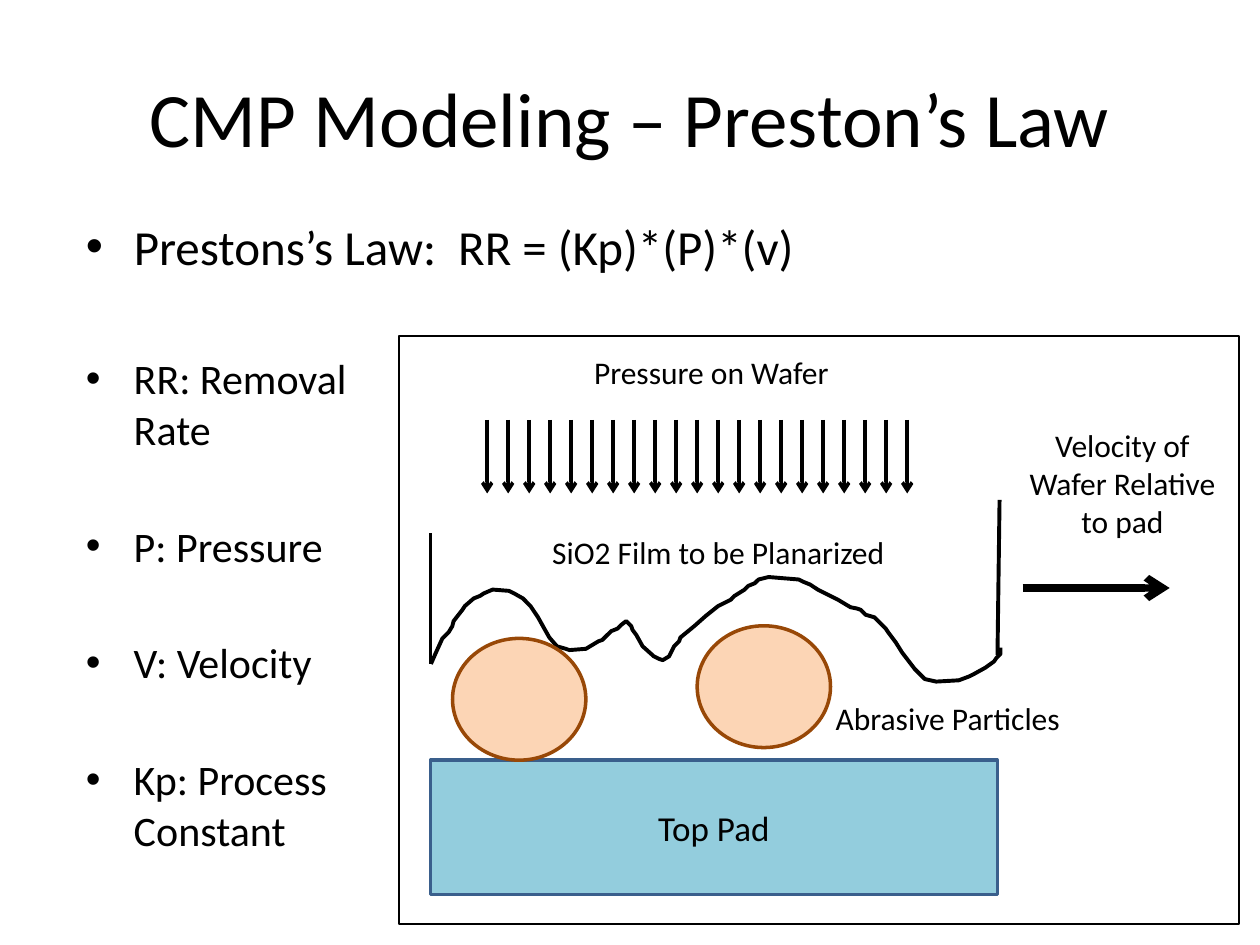
from lxml import etree
from pptx import Presentation
from pptx import util as u
from pptx.dml.color import RGBColor
from pptx.enum import shapes, text
from pptx.oxml.ns import qn

THEME = {
    "font": "Calibri",
    "ink": "000000", "pad": "93CDDD", "pad_line": "3A5F8C",
    "particle": "FCD5B5", "particle_line": "984807",
    "title": 44, "law": 28, "term": 24, "pad_text": 20, "label": 18,
}

presentation = Presentation()
presentation.slide_width, presentation.slide_height = u.Inches(10), u.Inches(7.5)
CELL = presentation.slide_width / 60  # 60 columns by 45 rows of square cells
slide = presentation.slides.add_slide(presentation.slide_layouts[5])


def grid(*cells):
    return [u.Emu(round(cell * CELL)) for cell in cells]


def style(item, line=None, width=1, fill=None, arrow=False):
    """Set outline and fill, drop the shadow, and add an arrowhead if asked."""
    properties = item._element.spPr
    item.line.color.rgb = RGBColor.from_string(THEME[line])
    item.line.width = u.Pt(width)
    if arrow:
        etree.SubElement(item.line._get_or_add_ln(), qn("a:tailEnd"), type="arrow")
    if hasattr(item, "fill"):
        if fill:
            item.fill.solid()
            item.fill.fore_color.rgb = RGBColor.from_string(THEME[fill])
        else:
            item.fill.background()
    etree.SubElement(properties, qn("a:effectLst"))


# Title
title = slide.shapes.title
title.left, title.top, title.width, title.height = grid(3, 1.8, 54, 7.5)
title.text_frame.text = "CMP Modeling – Preston’s Law"
title.text_frame.vertical_anchor = text.MSO_ANCHOR.MIDDLE
written = [(title, "title", text.PP_ALIGN.CENTER)]

# Film surface, in hundredths of an inch
film = [
    (342, 527), (346, 518), (351, 507), (356, 502), (359, 497), (360, 493),
    (367, 484), (369, 481), (376, 475), (381, 473), (384, 471), (391, 468),
    (404, 469), (408, 471), (415, 475), (421, 481), (427, 490), (432, 499),
    (436, 506), (442, 513), (449, 515), (452, 516), (465, 515), (475, 509),
    (478, 508), (485, 501), (490, 499), (493, 496), (497, 493), (501, 497),
    (502, 500), (505, 504), (510, 513), (519, 521), (523, 523), (526, 524),
    (531, 521), (535, 513), (539, 509), (540, 506), (551, 497), (560, 489),
    (570, 481), (580, 476), (583, 473), (591, 468), (594, 465), (599, 463),
    (602, 460), (610, 458), (634, 460), (638, 462), (643, 464), (649, 468),
    (655, 471), (659, 473), (665, 476), (670, 479), (675, 482), (680, 483),
    (683, 484), (687, 488), (694, 490), (697, 493), (700, 496), (703, 499),
    (705, 502), (708, 506), (711, 510), (716, 518), (726, 531), (734, 539),
    (743, 541), (761, 540), (769, 537), (773, 535), (782, 530), (789, 525),
    (791, 522), (794, 519), (794, 514),
]
builder = slide.shapes.build_freeform(*film[0], scale=u.Inches(0.01))
builder.add_line_segments(film[1:], close=False)
style(builder.convert_to_shape(), "ink", 2.25)

# Pad, abrasive particles and diagram frame
blocks = [
    ("RECTANGLE", (20.5, 36.2, 27, 6.4), "pad_line", 2, "pad", "Top Pad"),
    ("OVAL", (33.2, 29.8, 6.35, 5.8), "particle_line", 2, "particle", ""),
    ("OVAL", (21.55, 30.4, 6.35, 5.8), "particle_line", 2, "particle", ""),
    ("RECTANGLE", (19, 16, 40, 28), "ink", 1, None, ""),
]
for kind, box, line, width, fill, words in blocks:
    shape = slide.shapes.add_shape(shapes.MSO_SHAPE[kind], *grid(*box))
    style(shape, line, width, fill)
    if words:
        shape.text_frame.text = words
        written.append((shape, "pad_text", text.PP_ALIGN.CENTER))

# Film walls, velocity arrow and the row of pressure arrows
lines = [
    ((20.5, 31.6, 20.5, 25.4), 2.25, False),
    ((47.5, 31.2, 47.6, 23.8), 2.25, False),
    ((48.7, 28, 55.7, 28), 4.25, True),
]
lines += [((23.2 + i, 20, 23.2 + i, 23.5), 2, True) for i in range(21)]
for ends, width, arrow in lines:
    connector = slide.shapes.add_connector(shapes.MSO_CONNECTOR.STRAIGHT, *grid(*ends))
    style(connector, "ink", width, arrow=arrow)

# Diagram labels
labels = [
    ("SiO2 Film to be Planarized", (25.7, 25.1, 17.2, 2.4), False),
    ("Abrasive Particles", (39.2, 33, 12, 2.4), False),
    ("Pressure on Wafer", (27.7, 16.5, 12.5, 2.4), False),
    ("Velocity of Wafer Relative to pad", (48.2, 20, 10.5, 6.1), True),
]
for words, box, wrap in labels:
    label = slide.shapes.add_textbox(*grid(*box))
    label.text_frame.text = words
    label.text_frame.word_wrap = wrap
    written.append((label, "label", text.PP_ALIGN.CENTER if wrap else text.PP_ALIGN.LEFT))

# Bulleted law and its terms
lists = [
    ("law", (3.5, 10, 49, 3), ["Prestons’s Law:  RR = (Kp)*(P)*(v)"]),
    ("term", (3.5, 16.5, 14.5, 25),
     ["RR: Removal Rate", "P: Pressure", "V: Velocity", "Kp: Process Constant"]),
]
for size, box, items in lists:
    bullets = slide.shapes.add_textbox(*grid(*box))
    bullets.text_frame.word_wrap = True
    bullets.text_frame.text = "\n".join(items)
    for index, paragraph in enumerate(bullets.text_frame.paragraphs):
        paragraph.space_before = u.Pt(38 if index else 0)
        properties = paragraph._p.get_or_add_pPr()
        properties.set("marL", str(u.Inches(0.38)))
        properties.set("indent", str(-u.Inches(0.38)))
        etree.SubElement(properties, qn("a:buFont"), typeface="Arial")
        etree.SubElement(properties, qn("a:buChar"), char="•")
    written.append((bullets, size, text.PP_ALIGN.LEFT))

# Type
for shape, size, alignment in written:
    for paragraph in shape.text_frame.paragraphs:
        paragraph.alignment = alignment
        paragraph.font.name = THEME["font"]
        paragraph.font.size = u.Pt(THEME[size])
        paragraph.font.color.rgb = RGBColor.from_string(THEME["ink"])

presentation.save("out.pptx")
